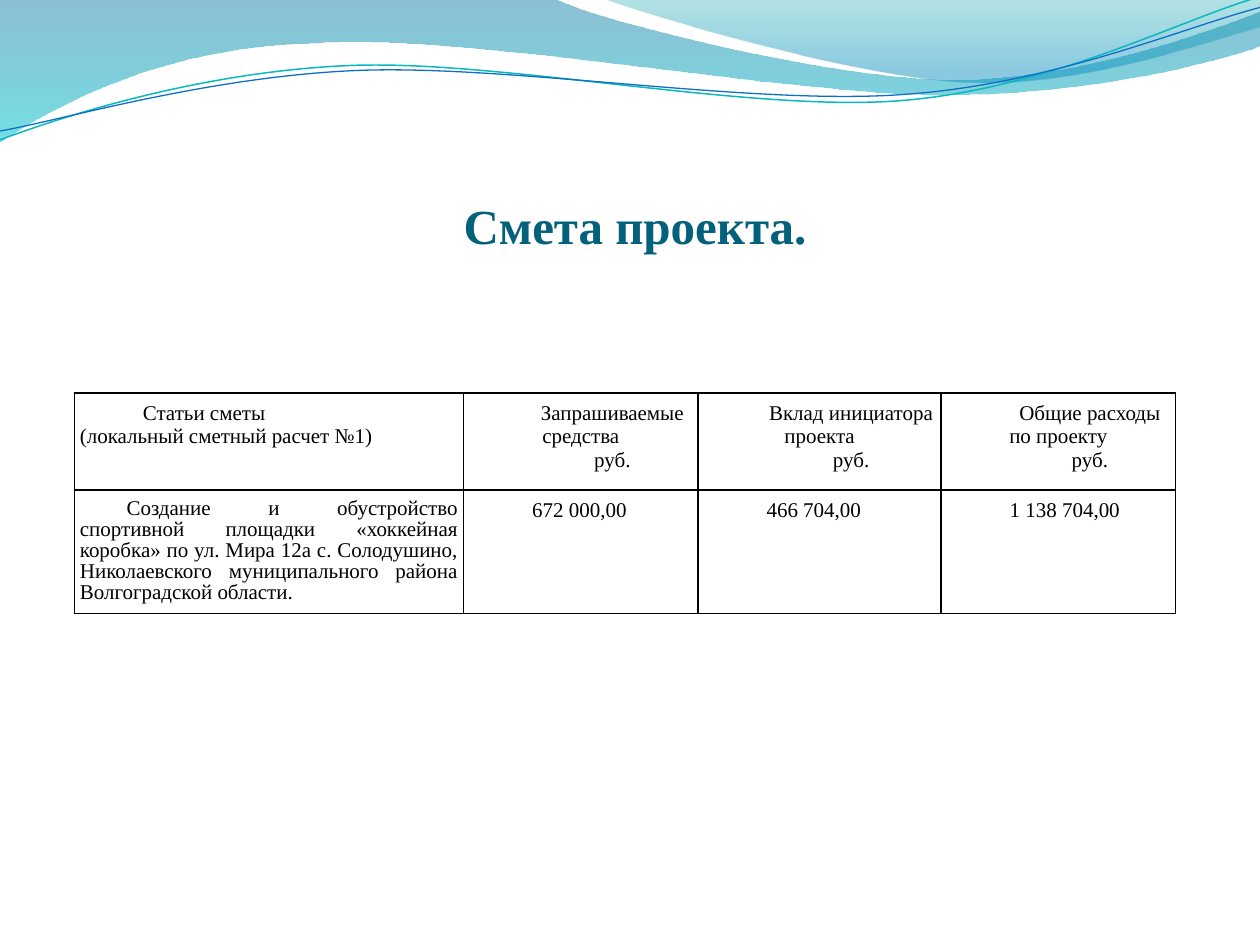
from math import cos, radians, sin

from lxml import etree
from pptx import Presentation
from pptx.dml.color import RGBColor
from pptx.enum.text import MSO_ANCHOR, PP_ALIGN
from pptx.oxml.ns import qn
from pptx.util import Inches, Pt

LEFT, CENTER, JUSTIFY = PP_ALIGN.LEFT, PP_ALIGN.CENTER, PP_ALIGN.JUSTIFY
BOTTOM = MSO_ANCHOR.BOTTOM
FONT = "Times New Roman"
TILT = 2.7

BANDS = [
    ([[(0, 0)], [(4.4, -0.01)],
      [(4.76, 0.17), (6.64, 0.63), (7.58, 0.63)], [(8.53, 0.63), (9.58, 0.26), (10, 0.09)],
      [(10.01, 0.36)],
      [(9.83, 0.44), (8.7, 0.76), (7.46, 0.75)], [(6.22, 0.75), (3.82, 0.28), (2.57, 0.34)],
      [(1.29, 0.36), (0.46, 0.83), (-0.01, 1.13)]],
     [(0, "0074A1", 45), (1, "00C6CF", 55)]),
    ([[(4.79, -0.01)],
      [(5.09, 0.11), (6.82, 0.62), (7.69, 0.65)], [(8.56, 0.69), (9.61, 0.32), (10, 0.21)],
      [(10, 0)]],
     [(0, "00A1A9", 30), (0.8, "008BBF", 45)]),
]
STRANDS = [
    ([[(0, 1.11)],
      [(0.48, 0.93), (1.58, 0.57), (2.77, 0.52)], [(3.95, 0.47), (5.93, 0.89), (7.13, 0.8)],
      [(8.33, 0.71), (9.38, 0.15), (9.98, -0.02)]], (4.99, 0.58), "0AB8BF", 0.85),
    ([[(0, 1.04)],
      [(0.47, 0.96), (1.64, 0.61), (2.83, 0.56)], [(4.03, 0.51), (5.97, 0.84), (7.17, 0.75)],
      [(8.36, 0.67), (9.41, 0.21), (10, 0.06)]], (5, 0.59), "0F6FC6", 0.75),
]

COLUMNS = [3.09, 1.86, 1.93, 1.86]
ROWS = [0.77, 0.98]
ESTIMATE = [
    [[("Статьи сметы", LEFT, 0.5), ("(локальный сметный расчет №1)", LEFT, 0)]]
    + [[(heading, CENTER, 0.5), ("руб.", CENTER, 0.5)] for heading in
       ("Запрашиваемые средства", "Вклад инициатора проекта", "Общие расходы по проекту")],
    [[("Создание и обустройство спортивной площадки «хоккейная коробка» по ул. Мира 12а "
       "с. Солодушино, Николаевского муниципального района Волгоградской области.",
       JUSTIFY, 0.37)]]
    + [[(amount, LEFT, 0.5)] for amount in ("672 000,00", "466 704,00", "1 138 704,00")],
]


def color(hex_code):
    """Turn a hex string into a colour."""
    return RGBColor.from_string(hex_code)


def style(paragraph, size, hex_code, bold=False):
    """Set the font of a whole paragraph."""
    font = paragraph.font
    font.name, font.size, font.bold = FONT, Pt(size), bold
    font.color.rgb = color(hex_code)


def turn(point, pivot, degrees):
    """Turn a point clockwise around a pivot."""
    angle = radians(degrees)
    x, y = point[0] - pivot[0], point[1] - pivot[1]
    return (pivot[0] + x * cos(angle) - y * sin(angle),
            pivot[1] + x * sin(angle) + y * cos(angle))


def add_outline(slide, unit, segments, close):
    """Draw lines and cubic curves whose points are counted in grid units."""
    points = [(x * unit, y * unit) for segment in segments for x, y in segment]
    builder = slide.shapes.build_freeform(*points[0], scale=1.0)
    builder.add_line_segments(points[1:], close=close)
    outline = builder.convert_to_shape()
    outline.shadow.inherit = False
    strokes = iter(list(outline.element.iter(qn("a:lnTo"))))
    for segment in segments[1:]:
        first, *others = [next(strokes) for _ in segment]
        if others:
            first.tag = qn("a:cubicBezTo")
            for other in others:
                first.append(other[0])
                other.getparent().remove(other)
    return outline


def add_waves(slide, unit):
    """Draw the translucent bands and thin strands along the top."""
    for segments, stops in BANDS:
        band = add_outline(slide, unit, segments, True)
        band.line.fill.background()
        band.fill.gradient()
        band.fill.gradient_angle = 270
        for stop, (position, hex_code, _) in zip(band.fill.gradient_stops, stops):
            stop.position = position
            stop.color.rgb = color(hex_code)
        shades = list(band.element.spPr.iter(qn("a:srgbClr")))
        for shade, (_, _, opacity) in zip(shades, stops):
            etree.SubElement(shade, qn("a:alpha")).set("val", str(opacity * 1000))
    for segments, pivot, hex_code, width in STRANDS:
        level = [[turn(point, pivot, TILT) for point in segment] for segment in segments]
        strand = add_outline(slide, unit, level, False)
        strand.rotation = 360 - TILT
        strand.fill.background()
        strand.line.color.rgb = color(hex_code)
        strand.line.width = Pt(width)


def add_title(slide, left, top, width, height):
    """Place the centred slide heading at the bottom of its box."""
    frame = slide.shapes.add_textbox(left, top, width, height).text_frame
    frame.word_wrap = True
    frame.vertical_anchor = BOTTOM
    frame.margin_left = frame.margin_right = frame.margin_bottom = 0
    heading = frame.paragraphs[0]
    heading.text = "Смета проекта."
    heading.alignment = CENTER
    style(heading, 28, "04617B", bold=True)


def add_borders(cell):
    """Give a cell a thin black border on every side."""
    properties = cell._tc.get_or_add_tcPr()
    for position, side in enumerate(("a:lnL", "a:lnR", "a:lnT", "a:lnB")):
        border = etree.Element(qn(side), w=str(Pt(1)))
        fill = etree.SubElement(border, qn("a:solidFill"))
        etree.SubElement(fill, qn("a:srgbClr"), val="000000")
        properties.insert(position, border)


def fill_cell(cell, lines):
    """Write the lines of one cell with their alignment and first-line indent."""
    cell.fill.background()
    add_borders(cell)
    cell.margin_left = cell.margin_right = Pt(3.2)
    cell.margin_top = cell.margin_bottom = Inches(0.07)
    frame = cell.text_frame
    for index, (text, alignment, indent) in enumerate(lines):
        line = frame.add_paragraph() if index else frame.paragraphs[0]
        line.text = text
        line.alignment = alignment
        properties = line._p.get_or_add_pPr()
        properties.set("marL", "0")
        properties.set("indent", str(Inches(indent)))
        if alignment == JUSTIFY:
            line.line_spacing = Pt(12)
        style(line, 12, "000000")


def add_estimate(slide, left, top, width, height):
    """Build the cost table, sharing the box among its columns and rows."""
    table = slide.shapes.add_table(len(ROWS), len(COLUMNS), left, top, width, height).table
    table.first_row = table.horz_banding = False
    for column, share in zip(table.columns, COLUMNS):
        column.width = int(width * share / sum(COLUMNS))
    for row, share, entries in zip(table.rows, ROWS, ESTIMATE):
        row.height = int(height * share / sum(ROWS))
        for cell, lines in zip(row.cells, entries):
            fill_cell(cell, lines)


def main():
    """Build and save the slide."""
    deck = Presentation()
    deck.slide_width, deck.slide_height = Inches(10), Inches(7.5)
    slide = deck.slides.add_slide(deck.slide_layouts[6])
    unit = deck.slide_width // 10
    add_waves(slide, unit)
    add_title(slide, *(int(unit * n) for n in (0.5, 0.77, 9.08, 1.25)))
    add_estimate(slide, *(int(unit * n) for n in (0.59, 3.12, sum(COLUMNS), sum(ROWS))))
    deck.save("out.pptx")


if __name__ == "__main__":
    main()
